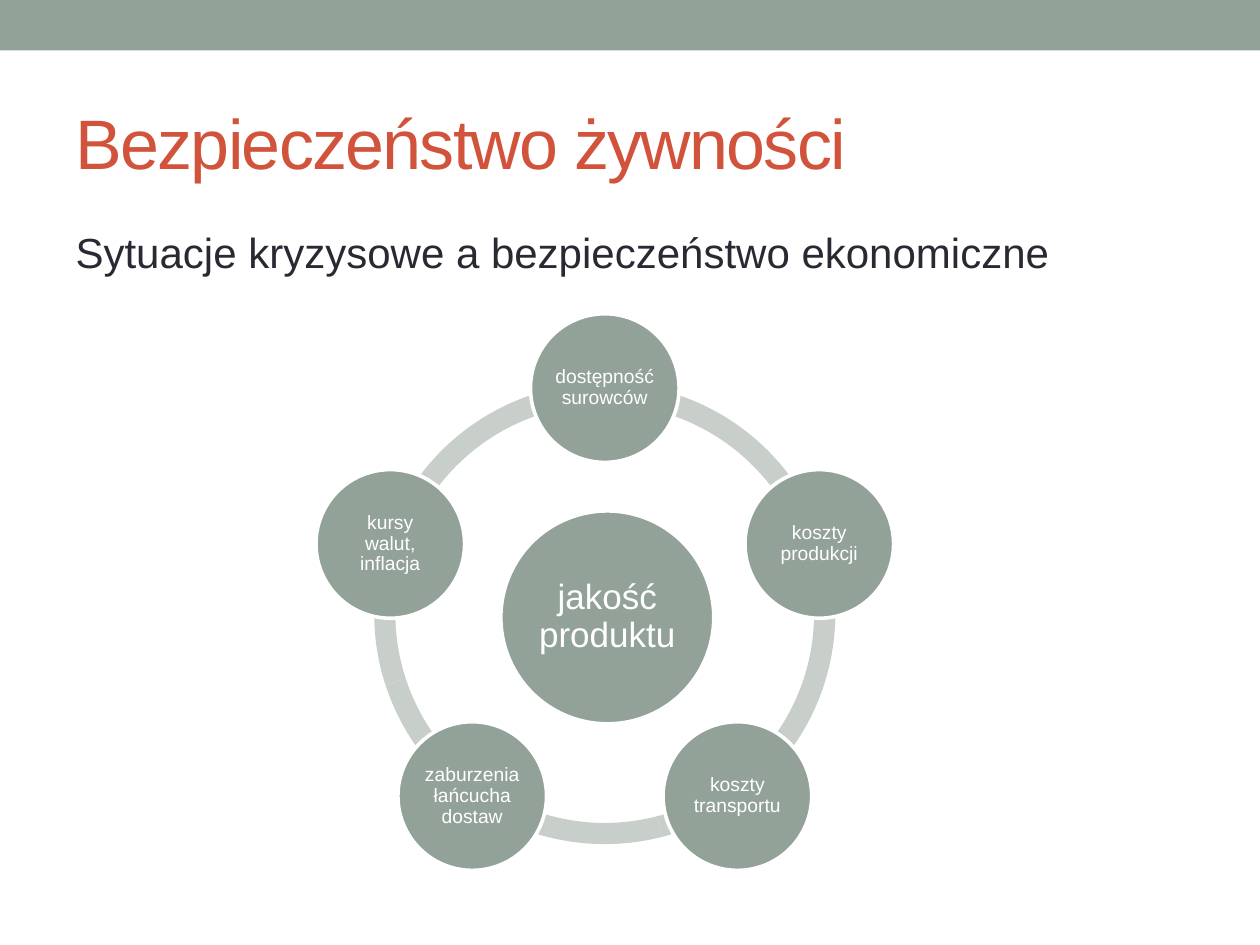
"""Builds a slide with a ring of five economic factors around product quality."""
from dataclasses import dataclass
from math import cos, radians, sin

from lxml import etree
from pptx import Presentation
from pptx.dml.color import RGBColor
from pptx.enum.shapes import MSO_SHAPE
from pptx.enum.text import MSO_ANCHOR, MSO_AUTO_SIZE, PP_ALIGN
from pptx.oxml.ns import qn
from pptx.util import Inches, Pt

RECT, ARC, OVAL = MSO_SHAPE.RECTANGLE, MSO_SHAPE.BLOCK_ARC, MSO_SHAPE.OVAL
LEFT, CENTER = PP_ALIGN.LEFT, PP_ALIGN.CENTER
TOP, MIDDLE = MSO_ANCHOR.TOP, MSO_ANCHOR.MIDDLE
WIDTH, HEIGHT = 10, 7.5


@dataclass(frozen=True)
class Theme:
    font: str = "Arial"
    accent: str = "93A299"
    ring: str = "C8CECA"
    title: str = "D2533C"
    body: str = "292934"
    white: str = "FFFFFF"
    title_size: int = 40
    body_size: int = 24
    hub_size: int = 20
    node_size: int = 11
    line: float = 2.08


@dataclass(frozen=True)
class Disc:
    text: str
    x: float
    y: float
    size: float
    font_size: int
    inset: float


THEME = Theme()
RING_X, RING_Y, RING_SIZE = 0.48 * WIDTH, 4.87, 3.66
RING_THICKNESS = 0.046
ORBIT, NODE_SIZE = 1.79, 1.18
ARC_START, ARC_STEP = 32.4, 43.2
FACTORS = ["dostępność surowców", "koszty produkcji", "koszty transportu",
           "zaburzenia łańcucha dostaw", "kursy walut, inflacja"]


def add_plain(slide, kind, x: float, y: float, w: float, h: float, color: str):
    """Add a filled shape without line or shadow."""
    sp = slide.shapes.add_shape(kind, Inches(x), Inches(y), Inches(w), Inches(h))
    sp.shadow.inherit = False
    sp.fill.solid()
    sp.fill.fore_color.rgb = RGBColor.from_string(color)
    sp.line.fill.background()
    return sp


def write(tf, text: str, size: int, color: str, frame: dict, para: dict):
    """Write one formatted paragraph and return it."""
    for name, value in frame.items():
        setattr(tf, name, value)
    p = tf.paragraphs[0]
    for name, value in para.items():
        setattr(p, name, value)
    r = p.add_run()
    r.text = text
    for name, value in {"name": THEME.font, "size": Pt(size), "bold": False}.items():
        setattr(r.font, name, value)
    r.font.color.rgb = RGBColor.from_string(color)
    return p


def place(sp, y: float, h: float) -> None:
    """Move a placeholder to the common text column."""
    box = {"left": 0.05 * WIDTH, "top": y, "width": 0.9 * WIDTH, "height": h}
    for name, value in box.items():
        setattr(sp, name, Inches(value))


def add_texts(slide) -> None:
    """Fill the title and body placeholders."""
    title, body = slide.shapes.title, slide.placeholders[1]
    place(title, 0.58, 1.08)
    place(body, 1.75, 5.33)
    frame = {"word_wrap": True, "auto_size": MSO_AUTO_SIZE.NONE}
    p = write(title.text_frame, "Bezpieczeństwo żywności", THEME.title_size, THEME.title,
              frame | {"vertical_anchor": MIDDLE}, {"alignment": LEFT})
    p.runs[0].font._element.set("spc", "-100")
    p = write(body.text_frame, "Sytuacje kryzysowe a bezpieczeństwo ekonomiczne",
              THEME.body_size, THEME.body, frame | {"vertical_anchor": TOP},
              {"alignment": LEFT, "space_before": Pt(0.2 * THEME.body_size)})
    pPr = p._p.get_or_add_pPr()
    for name in ("marL", "indent"):
        pPr.set(name, "0")
    etree.SubElement(pPr, qn("a:buNone"))


def add_ring(slide) -> None:
    """Draw the ring as five arcs that meet end to end."""
    bounds = [ARC_START + ARC_STEP * i for i in range(5)]
    for start, end in zip(bounds, bounds[1:] + bounds[:1]):
        sp = add_plain(slide, ARC, RING_X - RING_SIZE / 2, RING_Y - RING_SIZE / 2,
                       RING_SIZE, RING_SIZE, THEME.ring)
        for i, value in enumerate((start * 0.6, end * 0.6, RING_THICKNESS)):
            sp.adjustments[i] = value


def add_disc(slide, disc: Disc) -> None:
    """Draw a labelled disc around its centre."""
    sp = add_plain(slide, OVAL, disc.x - disc.size / 2, disc.y - disc.size / 2,
                   disc.size, disc.size, THEME.accent)
    sp.line.color.rgb = RGBColor.from_string(THEME.white)
    sp.line.width = Pt(THEME.line)
    frame = {f"margin_{side}": Inches(disc.inset)
             for side in ("left", "top", "right", "bottom")}
    write(sp.text_frame, disc.text, disc.font_size, THEME.white,
          frame | {"word_wrap": True, "vertical_anchor": MIDDLE},
          {"alignment": CENTER, "line_spacing": 0.9})


def main() -> None:
    """Build and save the slide."""
    prs = Presentation()
    prs.slide_width, prs.slide_height = Inches(WIDTH), Inches(HEIGHT)
    slide = prs.slides.add_slide(prs.slide_layouts[1])
    add_plain(slide, RECT, 0, 0, WIDTH, 0.4, THEME.accent)
    add_texts(slide)
    add_ring(slide)
    add_disc(slide, Disc("jakość produktu", RING_X + 0.02, RING_Y + 0.03, 1.69,
                         THEME.hub_size, 0.03))
    for i, text in enumerate(FACTORS):
        angle = radians(360 / len(FACTORS) * i - 90)
        add_disc(slide, Disc(text, RING_X + ORBIT * cos(angle), RING_Y + ORBIT * sin(angle),
                             NODE_SIZE, THEME.node_size, 0.02))
    prs.save("out.pptx")


if __name__ == "__main__":
    main()
